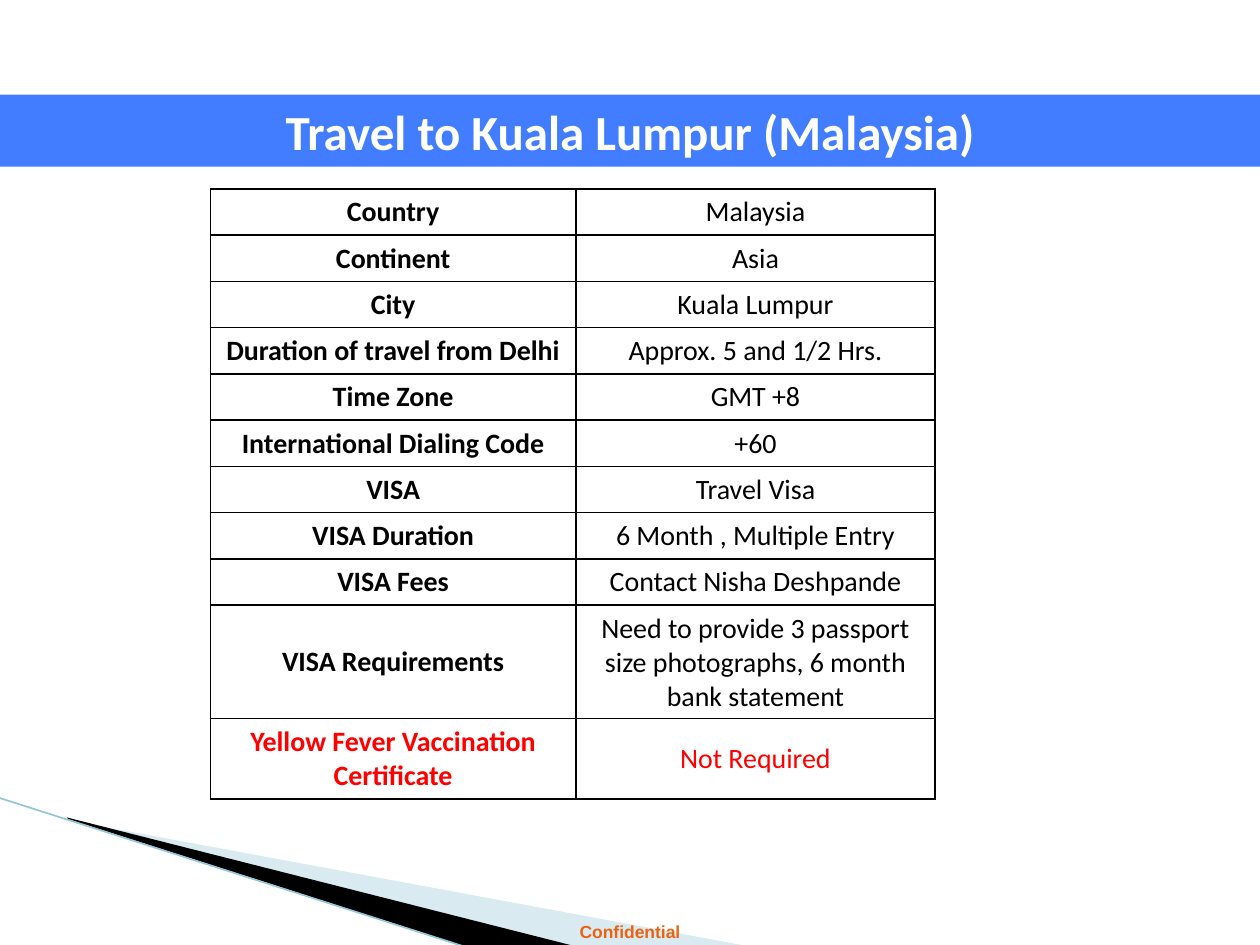
from typing import NamedTuple

from lxml.etree import SubElement
from pptx import Presentation
from pptx.dml.color import RGBColor
from pptx.enum.shapes import MSO_CONNECTOR
from pptx.enum.text import MSO_ANCHOR, PP_ALIGN
from pptx.oxml.ns import qn
from pptx.util import Cm, Pt

COLORS = {
    "banner": "437DFF",
    "white": "FFFFFF",
    "black": "000000",
    "alert": "FF0000",
    "footer": "EB6312",
    "pale": "A0CBDC",
    "edge": "97C5D8",
}
SLIDE_WIDTH = 25.4


class Wedge(NamedTuple):
    points: list
    color: str
    opacity: int = 100


class Fact(NamedTuple):
    label: str
    value: str
    height: float = 0.93
    color: str = "black"


WEDGES = [
    Wedge([(1.4, 16.54), (15.11, 19.08), (11.58, 19.08), (1.4, 16.51)], "pale", 40),
    Wedge([(1.35, 16.48), (11.61, 19.08), (9.45, 19.1), (1.37, 16.51)], "black"),
]

FACTS = [
    Fact("Country", "Malaysia"),
    Fact("Continent", "Asia"),
    Fact("City", "Kuala Lumpur"),
    Fact("Duration of travel from Delhi", "Approx. 5 and 1/2 Hrs."),
    Fact("Time Zone", "GMT +8"),
    Fact("International Dialing Code", "+60"),
    Fact("VISA", "Travel Visa"),
    Fact("VISA Duration", "6 Month , Multiple Entry"),
    Fact("VISA Fees", "Contact Nisha Deshpande"),
    Fact("VISA Requirements",
         "Need to provide 3 passport size photographs, 6 month bank statement", 2.29),
    Fact("Yellow Fever Vaccination Certificate", "Not Required", 1.62, "alert"),
]


def rgb(name: str) -> RGBColor:
    return RGBColor.from_string(COLORS[name])


def write_text(frame, text: str, *, size: int, color: str,
               font: str = "Calibri", bold: bool = False) -> None:
    frame.word_wrap = True
    para = frame.paragraphs[0]
    para.alignment = PP_ALIGN.CENTER
    span = para.add_run()
    span.text = text
    span.font.name = font
    span.font.size = Pt(size)
    span.font.bold = bold
    span.font.color.rgb = rgb(color)


def draw_wedge(slide, wedge: Wedge) -> None:
    start, *others = [(Cm(x), Cm(y)) for x, y in wedge.points]
    builder = slide.shapes.build_freeform(*start)
    builder.add_line_segments(others, close=True)
    shape = builder.convert_to_shape()
    shape.shadow.inherit = False
    shape.line.fill.background()
    shape.fill.solid()
    shape.fill.fore_color.rgb = rgb(wedge.color)
    if wedge.opacity < 100:
        color = shape.fill._xPr.find(qn("a:solidFill"))[0]
        SubElement(color, qn("a:alpha"), val=str(wedge.opacity * 1000))


def draw_edge(slide) -> None:
    edge = slide.shapes.add_connector(
        MSO_CONNECTOR.STRAIGHT, Cm(-0.03), Cm(16.08), Cm(9.42), Cm(19.1))
    edge.line.color.rgb = rgb("edge")
    edge.line.width = Pt(0.95)
    SubElement(edge._element.spPr, qn("a:effectLst"))


def draw_cell(cell, text: str, *, color: str, bold: bool) -> None:
    write_text(cell.text_frame, text, size=16, color=color, bold=bold)
    cell.vertical_anchor = MSO_ANCHOR.MIDDLE
    # Borders come before the fill in the cell properties
    properties = cell._tc.get_or_add_tcPr()
    for side in ("lnL", "lnR", "lnT", "lnB"):
        border = SubElement(properties, qn(f"a:{side}"), w=str(Pt(1)))
        fill = SubElement(border, qn("a:solidFill"))
        SubElement(fill, qn("a:srgbClr"), val=COLORS["black"])
    cell.fill.background()


def draw_facts(slide, facts: list[Fact]) -> None:
    widths = (7.37, 7.24)
    table = slide.shapes.add_table(
        len(facts), len(widths), Cm(4.24), Cm(3.81),
        Cm(sum(widths)), Cm(sum(fact.height for fact in facts))).table
    table.first_row = table.horz_banding = False
    for column, width in zip(table.columns, widths):
        column.width = Cm(width)
    for row, fact in zip(table.rows, facts):
        row.height = Cm(fact.height)
        draw_cell(row.cells[0], fact.label, color=fact.color, bold=True)
        draw_cell(row.cells[1], fact.value, color=fact.color, bold=False)


def main() -> None:
    deck = Presentation()
    deck.slide_width, deck.slide_height = Cm(SLIDE_WIDTH), Cm(19.05)
    slide = deck.slides.add_slide(deck.slide_layouts[5])

    # Corner decoration
    for wedge in WEDGES:
        draw_wedge(slide, wedge)
    draw_edge(slide)

    # Footer
    box = slide.shapes.add_textbox(0, Cm(18.44), Cm(SLIDE_WIDTH), Cm(0.69))
    write_text(box.text_frame, "Confidential", size=10, color="footer",
               font="Arial", bold=True)

    # Title banner
    title = slide.shapes.title
    title.left, title.top = Cm(0), Cm(1.91)
    title.width, title.height = Cm(SLIDE_WIDTH), Cm(1.45)
    title.fill.solid()
    title.fill.fore_color.rgb = rgb("banner")
    write_text(title.text_frame, "Travel to Kuala Lumpur (Malaysia)",
               size=28, color="white", bold=True)

    # Travel facts
    draw_facts(slide, FACTS)
    deck.save("out.pptx")


if __name__ == "__main__":
    main()
